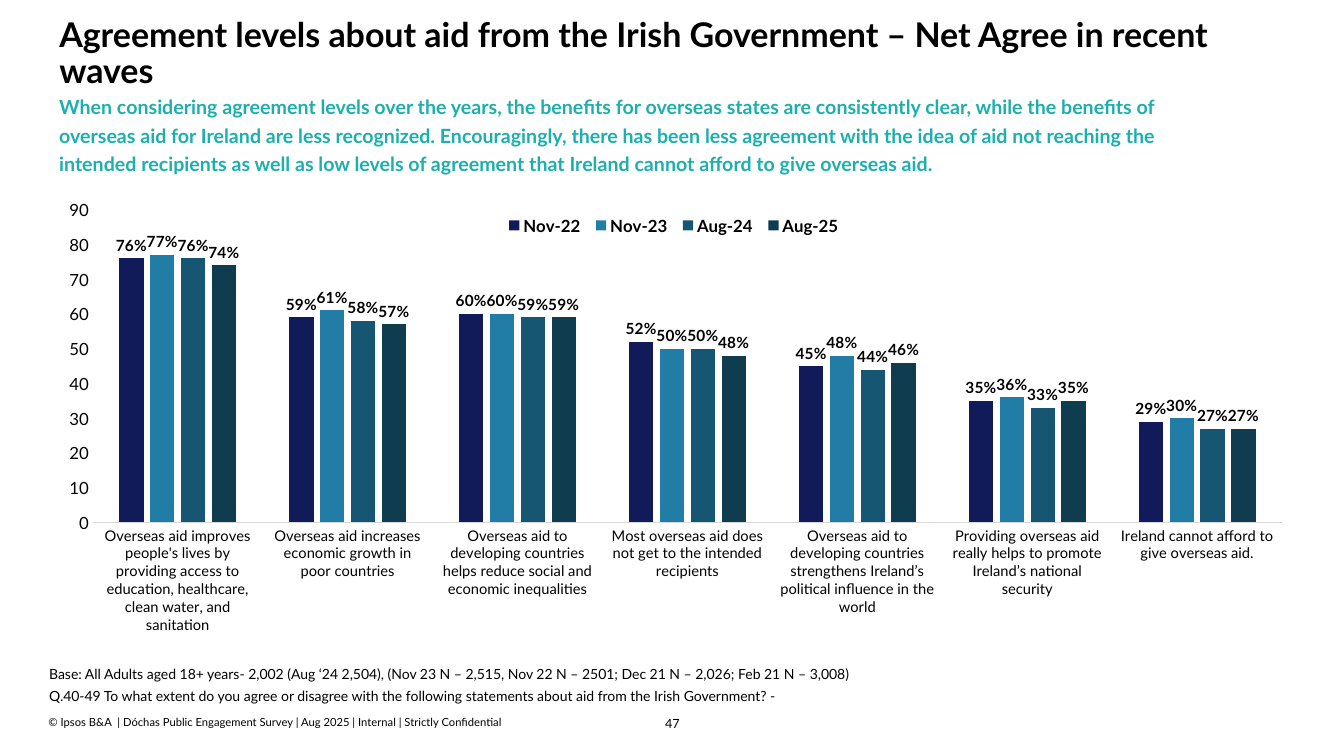
from lxml import etree
from pptx import Presentation
from pptx import util as u
from pptx.chart.data import CategoryChartData
from pptx.dml.color import RGBColor
from pptx.enum import chart as ch
from pptx.enum import text as tx
from pptx.oxml import parse_xml
from pptx.oxml.ns import nsdecls, qn

FACE = "Lato"
BLACK = "000000"
TEAL = "1DAFAD"
GREY = "D9D9D9"

TITLE = "Agreement levels about aid from the Irish Government – Net Agree in recent waves"
LEAD = (
    "When considering agreement levels over the years, the benefits for overseas states are "
    "consistently clear, while the benefits of overseas aid for Ireland are less recognized. "
    "Encouragingly, there has been less agreement with the idea of aid not reaching the intended "
    "recipients as well as low levels of agreement that Ireland cannot afford to give overseas aid."
)
NOTES = [
    "Base: All Adults aged 18+ years- 2,002 (Aug ‘24 2,504), (Nov 23 N – 2,515, "
    "Nov 22 N – 2501; Dec 21 N – 2,026; Feb 21 N – 3,008)",
    "Q.40-49 To what extent do you agree or disagree with the following statements "
    "about aid from the Irish Government? -",
]
RIGHTS = "© Ipsos B&A  | Dóchas Public Engagement Survey | Aug 2025 | Internal | Strictly Confidential"

CLAIMS = [
    "Overseas aid improves people's lives by providing access to education, healthcare, "
    "clean water, and sanitation",
    "Overseas aid increases economic growth in poor countries",
    "Overseas aid to developing countries helps reduce social and economic inequalities",
    "Most overseas aid does not get to the intended recipients",
    "Overseas aid to developing countries strengthens Ireland’s political influence in the world",
    "Providing overseas aid really helps to promote Ireland’s national security",
    "Ireland cannot afford to give overseas aid.",
]
WAVES = [
    ("Nov-22", "121B5A", (76, 59, 60, 52, 45, 35, 29)),
    ("Nov-23", "217DA6", (77, 61, 60, 50, 48, 36, 30)),
    ("Aug-24", "175672", (76, 58, 59, 50, 44, 33, 27)),
    ("Aug-25", "103C50", (74, 57, 59, 48, 46, 35, 27)),
]


def rgb(code):
    return RGBColor.from_string(code)


def style(font, size, color=BLACK, bold=False):
    font.name = FACE
    font.size = u.Pt(size)
    font.bold = bold
    font.color.rgb = rgb(color)


def fill(frame, lines, size, color=BLACK, bold=False, lead=1.0, after=0,
         align=tx.PP_ALIGN.LEFT, anchor=tx.MSO_ANCHOR.TOP):
    """Put one paragraph per line in a frame and format them alike."""
    frame.text = "\n".join(lines)
    frame.word_wrap = True
    frame.auto_size = tx.MSO_AUTO_SIZE.NONE
    frame.vertical_anchor = anchor
    for para in frame.paragraphs:
        para.alignment = align
        para.line_spacing = lead
        para.space_before = u.Pt(0)
        para.space_after = u.Pt(after)
        for run in para.runs:
            style(run.font, size, color, bold)


def label(slide, box, lines, size, inset=0, **look):
    frame = slide.shapes.add_textbox(*map(u.Cm, box)).text_frame
    frame.margin_left = frame.margin_right = u.Cm(inset)
    frame.margin_top = frame.margin_bottom = u.Cm(inset / 2)
    fill(frame, lines, size, **look)


def head(slide, box, line):
    title = slide.shapes.title
    title.left, title.top, title.width, title.height = map(u.Cm, box)
    fill(title.text_frame, [line], 24.3, bold=True, lead=0.9)


def place(part, box, inner=False):
    """Fix a chart part at x, y, w, h, given as shares of the chart."""
    for old in part.findall(qn("c:layout")):
        part.remove(old)
    root = parse_xml(f"<c:layout {nsdecls('c')}><c:manualLayout/></c:layout>")
    pairs = [("layoutTarget", "inner")] if inner else []
    pairs += [("xMode", "edge"), ("yMode", "edge"), *zip("xywh", box)]
    for tag, val in pairs:
        etree.SubElement(root[0], qn(f"c:{tag}"), val=str(val))
    part.insert(0 if inner else 1, root)


def axes(chart):
    cat, val = chart.category_axis, chart.value_axis
    for axis, size in ((cat, 10.5), (val, 12)):
        axis.major_tick_mark = axis.minor_tick_mark = ch.XL_TICK_MARK.NONE
        axis.has_major_gridlines = False
        style(axis.tick_labels.font, size)
    cat.format.line.color.rgb = rgb(GREY)
    cat.format.line.width = u.Pt(0.75)
    val.format.line.fill.background()
    val.minimum_scale, val.maximum_scale, val.major_unit = 0, 90, 10


def bars(plot):
    plot.gap_width, plot.overlap = 219, -27
    plot.vary_by_categories = False
    for series, (_, color, _) in zip(plot.series, WAVES):
        series.format.fill.solid()
        series.format.fill.fore_color.rgb = rgb(color)
        tags = series.data_labels
        tags.show_value = True
        tags.position = ch.XL_LABEL_POSITION.OUTSIDE_END
        tags.number_format = '#"%"'
        tags.number_format_is_linked = False
        style(tags.font, 11, bold=True)


def graph(slide, box):
    data = CategoryChartData()
    data.categories = CLAIMS
    for name, _, vals in WAVES:
        data.add_series(name, vals)
    kind = ch.XL_CHART_TYPE.COLUMN_CLUSTERED
    chart = slide.shapes.add_chart(kind, *map(u.Cm, box), data).chart
    chart.has_title = False
    style(chart.font, 10)
    axes(chart)
    bars(chart.plots[0])
    chart.has_legend = True
    key = chart.legend
    key.position = ch.XL_LEGEND_POSITION.BOTTOM
    key.include_in_layout = False
    style(key.font, 12, bold=True)
    area = chart.plots[0]._element.getparent()
    place(area, (0.034, 0.123, 0.954, 0.644), inner=True)
    place(key._element, (0.36, 0.125, 0.28, 0.06))


def main():
    deck = Presentation()
    deck.slide_width, deck.slide_height = u.Cm(33.87), u.Cm(19.05)
    slide = deck.slides.add_slide(deck.slide_layouts[5])
    head(slide, (1.24, 0.32, 31.34, 2.08), TITLE)
    label(slide, (1.24, 2.16, 29.95, 1.37), [LEAD], 14, inset=0.25,
          color=TEAL, bold=True, lead=1.2)
    graph(slide, (1.27, 3.78, 31.42, 12.24))
    label(slide, (1.24, 16.71, 25.96, 0.91), NOTES, 10, lead=1.15, after=2)
    label(slide, (1.22, 18.03, 15.49, 0.33), [RIGHTS], 8, anchor=tx.MSO_ANCHOR.BOTTOM)
    label(slide, (16.26, 18.01, 1.37, 0.38), ["47"], 9, lead=1.1, align=tx.PP_ALIGN.CENTER)
    deck.save("out.pptx")


if __name__ == "__main__":
    main()
